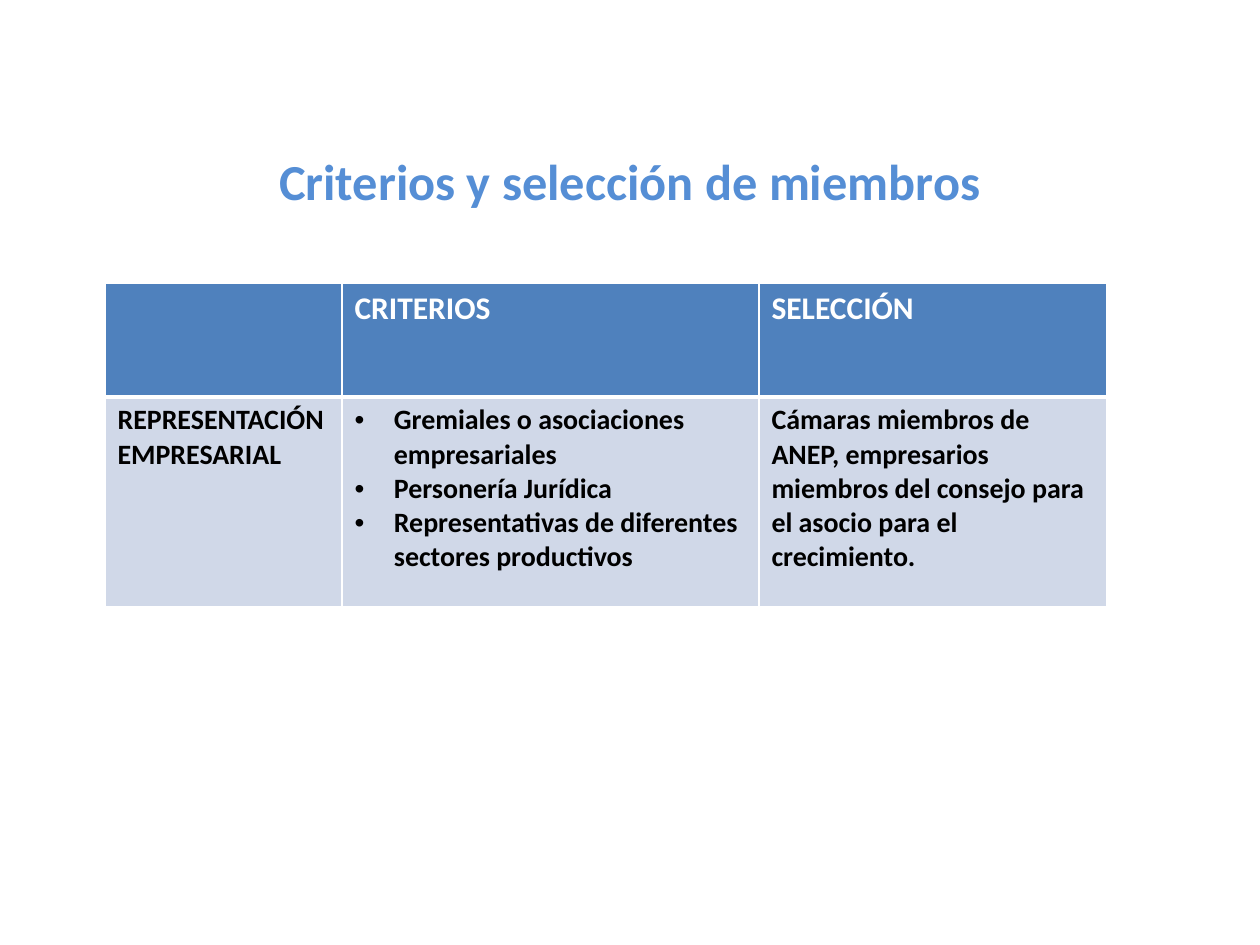
from dataclasses import dataclass

from lxml.etree import SubElement
from pptx import Presentation
from pptx.dml.color import RGBColor as Color
from pptx.enum.text import MSO_ANCHOR as Anchor, PP_ALIGN as Align
from pptx.oxml.ns import qn
from pptx.util import Pt

COLORS = {
    "title": "558ED5",
    "header": "4F81BD",
    "body": "D0D8E8",
    "light": "FFFFFF",
    "dark": "000000",
}
FONT = "Calibri"
INDENT = Pt(22.5)
COLUMN_WIDTHS = (135.4, 238.3, 198.7)


@dataclass(frozen=True)
class RowStyle:
    height: float
    fill: str
    text_color: str
    size: float
    bottom_line: float


@dataclass(frozen=True)
class CellText:
    lines: tuple[str, ...] = ()
    bulleted: bool = False


HEADER = RowStyle(64.8, "header", "light", 18, 3)
BODY = RowStyle(120.2, "body", "dark", 16, 1)

ROWS = (
    (HEADER, (CellText(), CellText(("CRITERIOS",)), CellText(("SELECCIÓN",)))),
    (BODY, (
        CellText(("REPRESENTACIÓN EMPRESARIAL",)),
        CellText((
            "Gremiales o asociaciones empresariales",
            "Personería Jurídica",
            "Representativas de diferentes sectores productivos",
        ), bulleted=True),
        CellText(("Cámaras miembros de ANEP, empresarios miembros del consejo "
                  "para el asocio para el crecimiento.",)),
    )),
)


def write_lines(frame, lines: tuple[str, ...], *, size: float, color: str,
                align=Align.LEFT, bulleted: bool = False) -> None:
    for index, line in enumerate(lines):
        para = frame.add_paragraph() if index else frame.paragraphs[0]
        para.alignment = align
        if bulleted:
            props = para._p.get_or_add_pPr()
            props.set("marL", str(INDENT))
            props.set("indent", str(-INDENT))
            SubElement(props, qn("a:buFont")).set("typeface", "Arial")
            SubElement(props, qn("a:buChar")).set("char", "•")
        span = para.add_run()
        span.text = line
        span.font.name = FONT
        span.font.size = Pt(size)
        span.font.bold = True
        span.font.color.rgb = Color.from_string(COLORS[color])


def set_borders(cell, widths: dict[str, float]) -> None:
    props = cell._tc.get_or_add_tcPr()
    # Border lines come before the fill in the cell properties
    for position, (side, width) in enumerate(widths.items()):
        line = SubElement(props, qn(f"a:ln{side}"), w=str(Pt(width)))
        fill = SubElement(line, qn("a:solidFill"))
        SubElement(fill, qn("a:srgbClr")).set("val", COLORS["light"])
        props.insert(position, line)


def draw_title(page, text: str) -> None:
    box = page.shapes.add_textbox(Pt(36), Pt(82), Pt(648), Pt(42))
    frame = box.text_frame
    frame.word_wrap = True
    frame.vertical_anchor = Anchor.MIDDLE
    write_lines(frame, (text,), size=28.8, color="title", align=Align.CENTER)


def draw_table(page) -> None:
    height = sum(style.height for style, _ in ROWS)
    table = page.shapes.add_table(
        len(ROWS), len(COLUMN_WIDTHS), Pt(60), Pt(162),
        Pt(sum(COLUMN_WIDTHS)), Pt(height)).table
    for column, width in zip(table.columns, COLUMN_WIDTHS):
        column.width = Pt(width)

    line_above = 1
    for row, (style, contents) in zip(table.rows, ROWS):
        row.height = Pt(style.height)
        for cell, content in zip(row.cells, contents):
            cell.fill.solid()
            cell.fill.fore_color.rgb = Color.from_string(COLORS[style.fill])
            set_borders(cell, {"L": 1, "R": 1, "T": line_above,
                               "B": style.bottom_line})
            write_lines(cell.text_frame, content.lines, size=style.size,
                        color=style.text_color, bulleted=content.bulleted)
        line_above = style.bottom_line


def main() -> None:
    deck = Presentation()
    deck.slide_width, deck.slide_height = Pt(720), Pt(540)
    page = deck.slides.add_slide(deck.slide_layouts[6])
    draw_title(page, "Criterios y selección de miembros")
    draw_table(page)
    deck.save("out.pptx")


if __name__ == "__main__":
    main()
